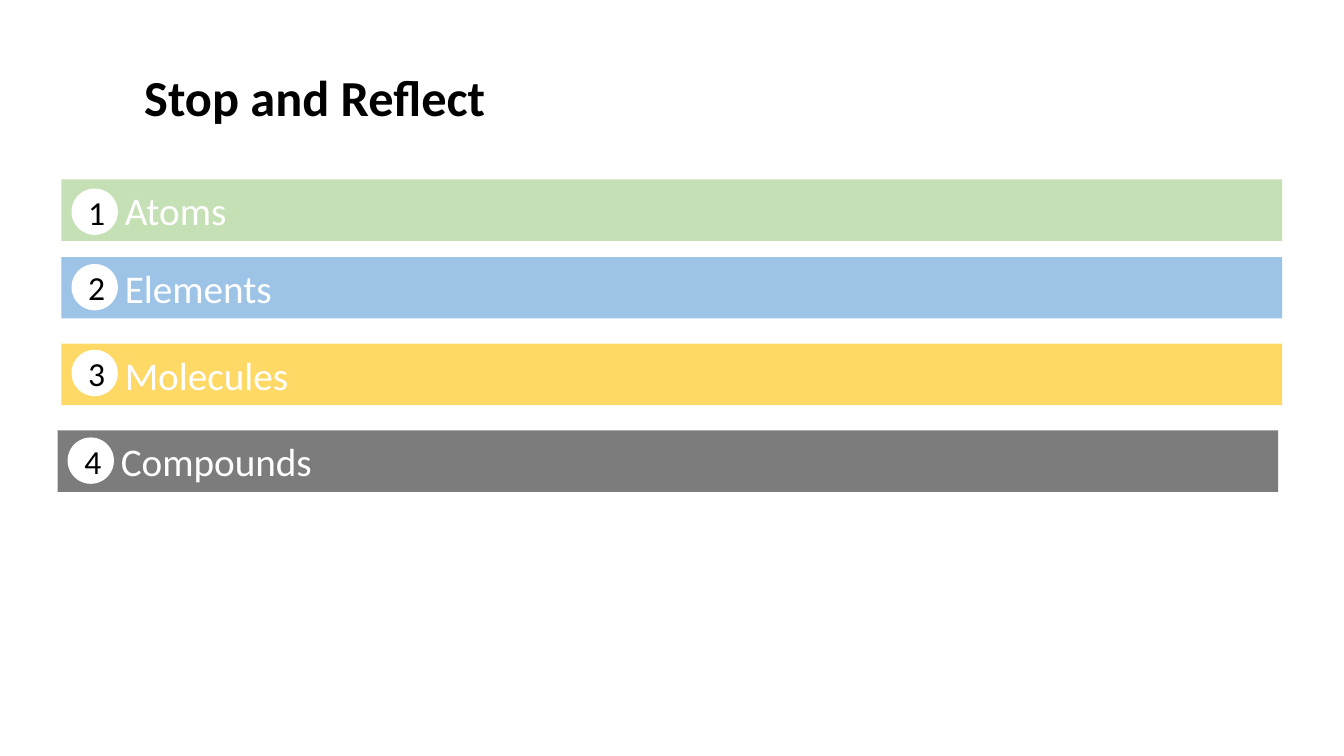
"""Build the Stop and Reflect slide with its four numbered topics."""
from dataclasses import dataclass

import pptx
import pptx.dml.color
import pptx.enum.shapes
import pptx.enum.text
import pptx.util

Pt = pptx.util.Pt
Shapes = pptx.enum.shapes.MSO_SHAPE
Align = pptx.enum.text.PP_ALIGN
Anchor = pptx.enum.text.MSO_ANCHOR

FONT = "Calibri"
WHITE = "FFFFFF"
BLACK = "000000"
BAR_WIDTH = 871.9
BAR_HEIGHT = 43.9
BADGE_SIZE = 33.1
BADGE_OFFSET = 7.2
TEXT_INDENT = 45.2


@dataclass
class Topic:
    name: str
    fill: str
    left: float
    top: float
    badge_top: float


TOPICS = [
    Topic("Atoms", "C5E0B4", 43.9, 128.2, 134.7),
    Topic("Elements", "9DC3E6", 43.9, 183.6, 188.6),
    Topic("Molecules", "FFD966", 43.9, 245.5, 249.9),
    Topic("Compounds", "7C7C7C", 41.1, 307.4, 312.5),
]


def set_color(color_format, value: str) -> None:
    color_format.rgb = pptx.dml.color.RGBColor.from_string(value)


def write_text(shape, text: str, size: float, color: str, align, anchor, bold: bool = False) -> None:
    frame = shape.text_frame
    frame.text = text
    frame.vertical_anchor = anchor
    paragraph = frame.paragraphs[0]
    paragraph.alignment = align
    font = paragraph.runs[0].font
    font.name = FONT
    font.size = Pt(size)
    font.bold = bold
    set_color(font.color, color)


def add_filled_shape(slide, kind, left: float, top: float, width: float, height: float, fill: str):
    shape = slide.shapes.add_shape(kind, Pt(left), Pt(top), Pt(width), Pt(height))
    shape.shadow.inherit = False
    shape.fill.solid()
    set_color(shape.fill.fore_color, fill)
    shape.line.fill.background()
    return shape


def add_topic(slide, number: int, topic: Topic) -> None:
    bar = add_filled_shape(slide, Shapes.RECTANGLE, topic.left, topic.top, BAR_WIDTH, BAR_HEIGHT, topic.fill)
    write_text(bar, topic.name, 28, WHITE, Align.LEFT, Anchor.MIDDLE)
    bar.text_frame.margin_left = Pt(TEXT_INDENT)
    badge = add_filled_shape(slide, Shapes.OVAL, topic.left + BADGE_OFFSET, topic.badge_top,
                             BADGE_SIZE, BADGE_SIZE, WHITE)
    write_text(badge, str(number), 24, BLACK, Align.CENTER, Anchor.MIDDLE)


def add_title(slide, text: str) -> None:
    title = slide.shapes.title
    title.left, title.top, title.width, title.height = Pt(95.8), Pt(18.7), Pt(599.8), Pt(75.6)
    write_text(title, text, 36, BLACK, Align.LEFT, Anchor.BOTTOM, bold=True)
    title.text_frame.auto_size = pptx.enum.text.MSO_AUTO_SIZE.NONE
    title.text_frame.paragraphs[0].line_spacing = 0.9


def main() -> None:
    presentation = pptx.Presentation()
    presentation.slide_width, presentation.slide_height = Pt(960), Pt(540)
    slide = presentation.slides.add_slide(presentation.slide_layouts[5])
    add_title(slide, "Stop and Reflect")
    for number, topic in enumerate(TOPICS, start=1):
        add_topic(slide, number, topic)
    presentation.save("out.pptx")


if __name__ == "__main__":
    main()
